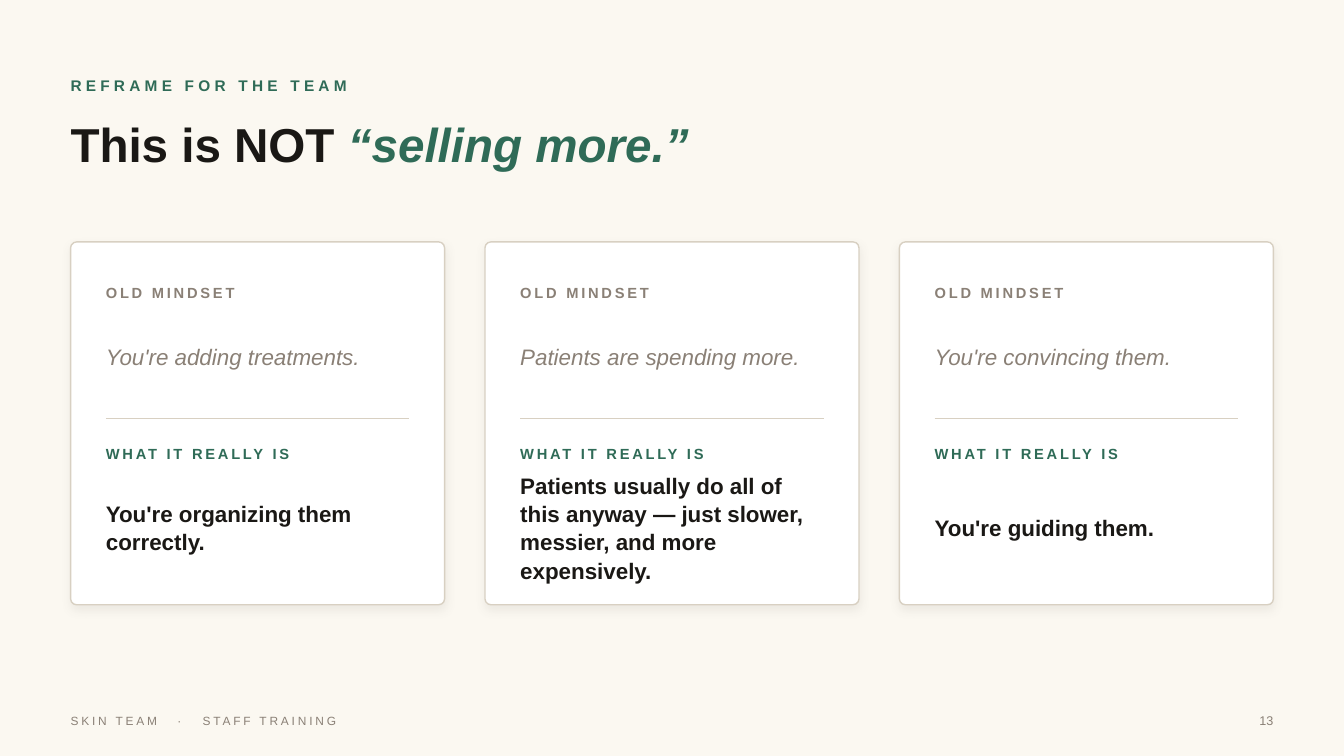
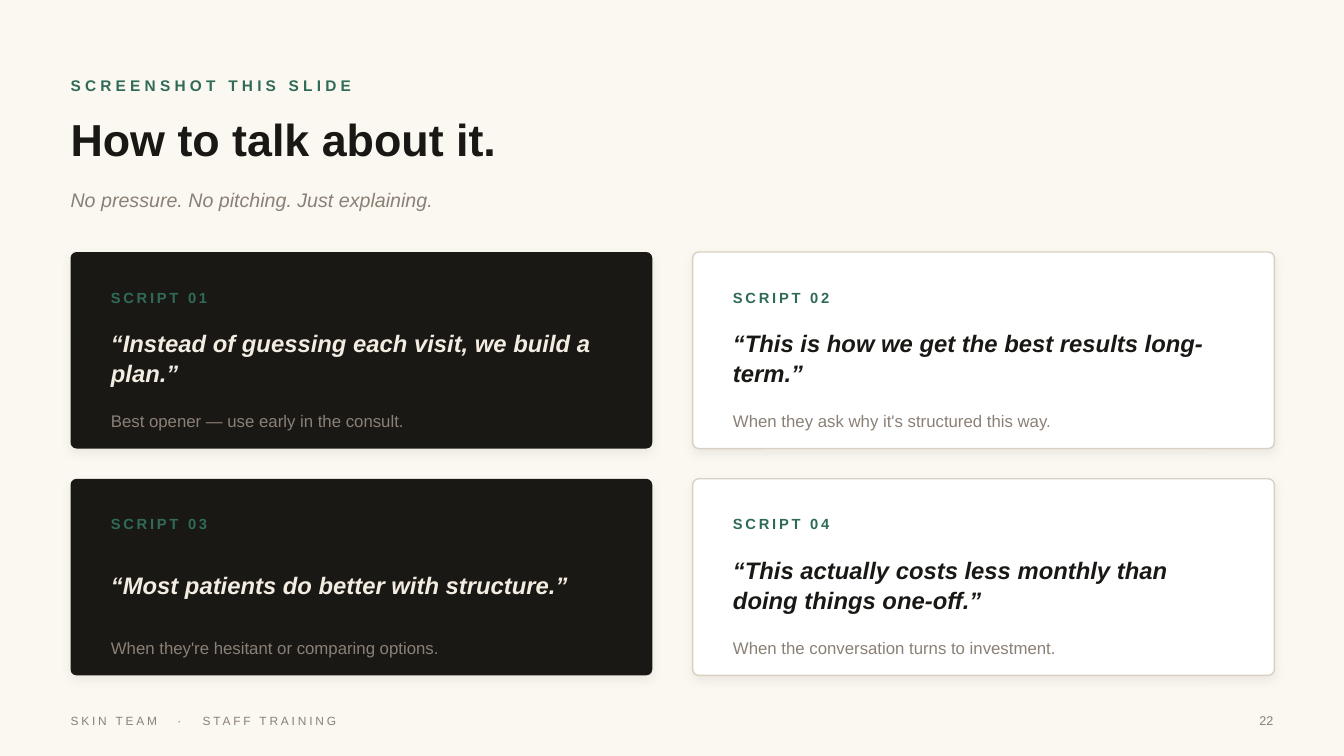
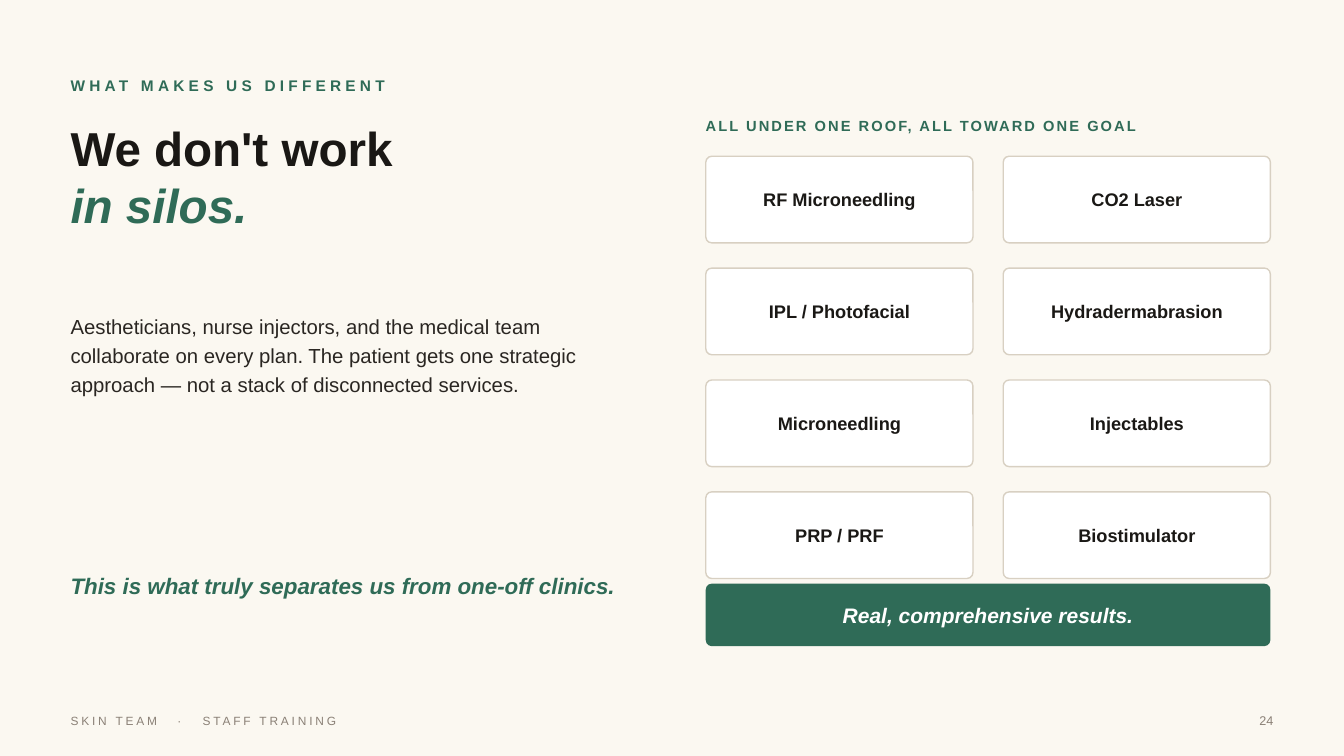
from dataclasses import dataclass, replace

from lxml.etree import SubElement
from pptx import Presentation
from pptx.dml.color import RGBColor
from pptx.enum.shapes import MSO_CONNECTOR as Connector, MSO_SHAPE as Shape
from pptx.enum.text import MSO_ANCHOR as Anchor, PP_ALIGN as Align
from pptx.oxml.ns import qn
from pptx.util import Inches, Pt

FONT = "Arial"
CREAM, WHITE, INK = "FBF8F1", "FFFFFF", "1A1815"
GREEN, GRAY, BORDER = "2F6B57", "8A8076", "D8D0C2"
BODY_INK, PALE, SHADOW = "2A2622", "F3ECE1", "6B655D"
MARGIN = 0.7
CORNER_RADIUS = 0.06


@dataclass(frozen=True)
class Style:
    """Character formatting of a run."""
    size: float
    color: str = INK
    bold: bool = False
    italic: bool = False
    tracking: float = 0


EYEBROW = Style(11, GREEN, bold=True, tracking=3)
LABEL = Style(10.5, GREEN, bold=True, tracking=2)
TITLE = Style(34, bold=True)
TITLE_ACCENT = replace(TITLE, color=GREEN, italic=True)
STATEMENT = Style(16, bold=True)
QUOTE = Style(17, bold=True, italic=True)
CHIP = Style(13, bold=True)

MINDSETS = [
    ("You're adding treatments.", "You're organizing them correctly."),
    ("Patients are spending more.",
     "Patients usually do all of this anyway — just slower, messier, and more expensively."),
    ("You're convincing them.", "You're guiding them."),
]
SCRIPTS = [
    ("“Instead of guessing each visit, we build a plan.”",
     "Best opener — use early in the consult."),
    ("“This is how we get the best results long-term.”",
     "When they ask why it's structured this way."),
    ("“Most patients do better with structure.”",
     "When they're hesitant or comparing options."),
    ("“This actually costs less monthly than doing things one-off.”",
     "When the conversation turns to investment."),
]
TREATMENTS = [
    "RF Microneedling", "CO2 Laser", "IPL / Photofacial", "Hydradermabrasion",
    "Microneedling", "Injectables", "PRP / PRF", "Biostimulator",
]


def rgb(color):
    """Turn a hex string into a colour."""
    return RGBColor.from_string(color)


def add_run(paragraph, text, style):
    """Append one formatted run."""
    run = paragraph.add_run()
    run.text = text
    run.font.name = FONT
    run.font.size = Pt(style.size)
    run.font.bold = style.bold
    run.font.italic = style.italic
    run.font.color.rgb = rgb(style.color)
    if style.tracking:
        run._r.get_or_add_rPr().set("spc", str(int(style.tracking * 100)))


def fill_frame(frame, paragraphs, align=Align.LEFT, spacing=None):
    """Write paragraphs of (text, style) runs into a frame without insets."""
    frame.word_wrap = True
    frame.vertical_anchor = Anchor.MIDDLE
    frame.margin_left = frame.margin_right = frame.margin_top = frame.margin_bottom = 0
    for index, runs in enumerate(paragraphs):
        paragraph = frame.add_paragraph() if index else frame.paragraphs[0]
        paragraph.alignment = align
        if spacing:
            paragraph.line_spacing = spacing
        for text, style in runs:
            add_run(paragraph, text, style)


def add_text(slide, box, *paragraphs, **layout):
    """Add a text box at (left, top, width, height)."""
    shape = slide.shapes.add_textbox(*map(Inches, box))
    fill_frame(shape.text_frame, paragraphs, **layout)
    return shape


def add_shadow(shape):
    """Give a shape a soft shadow falling straight down."""
    effects = shape._element.spPr.find(qn("a:effectLst"))
    shadow = SubElement(effects, qn("a:outerShdw"), blurRad=str(Pt(7)), dist=str(Pt(3)),
                        dir="5400000", algn="bl", rotWithShape="0")
    color = SubElement(shadow, qn("a:srgbClr"), val=SHADOW)
    SubElement(color, qn("a:alpha"), val="10000")


def add_panel(slide, box, fill=WHITE, shadow=False):
    """Add a rounded panel, outlined when it is white."""
    panel = slide.shapes.add_shape(Shape.ROUNDED_RECTANGLE, *map(Inches, box))
    panel.adjustments[0] = CORNER_RADIUS / min(box[2:])
    panel.fill.solid()
    panel.fill.fore_color.rgb = rgb(fill)
    panel.shadow.inherit = False
    if fill == WHITE:
        panel.line.color.rgb = rgb(BORDER)
        panel.line.width = Pt(1)
    else:
        panel.line.fill.background()
    if shadow:
        add_shadow(panel)
    return panel


def add_rule(slide, left, top, width):
    """Add a thin horizontal divider."""
    rule = slide.shapes.add_connector(Connector.STRAIGHT, Inches(left), Inches(top),
                                      Inches(left + width), Inches(top))
    rule.line.color.rgb = rgb(BORDER)
    rule.line.width = Pt(1)
    SubElement(rule._element.spPr, qn("a:effectLst"))


def add_footer(slide, number):
    """Add the deck name, spaced by tab stops, and the page number."""
    deck_name = add_text(slide, (MARGIN, 7, 8, 0.3),
                         [("SKIN TEAM\t·\tSTAFF TRAINING", Style(8.5, GRAY, tracking=2))])
    properties = deck_name.text_frame.paragraphs[0]._p.get_or_add_pPr()
    stops = SubElement(properties, qn("a:tabLst"))
    for position in (1.06, 1.31):
        SubElement(stops, qn("a:tab"), pos=str(Inches(position)), algn="l")
    add_text(slide, (12.13, 7, 0.5, 0.3), [(str(number), Style(9, GRAY))], align=Align.RIGHT)


def new_slide(presentation, eyebrow, number):
    """Add a blank slide with its eyebrow and footer."""
    slide = presentation.slides.add_slide(presentation.slide_layouts[6])
    add_text(slide, (MARGIN, 0.7, 9, 0.3), [(eyebrow, EYEBROW)])
    add_footer(slide, number)
    return slide


def add_mindset_card(slide, left, old, real):
    """Add a card setting an old mindset against the real one."""
    add_panel(slide, (left, 2.4, 3.71, 3.6), shadow=True)
    inner, width = left + 0.35, 3.01
    add_text(slide, (inner, 2.75, width, 0.3), [("OLD MINDSET", replace(LABEL, color=GRAY))])
    add_text(slide, (inner, 3.08, width, 0.9), [(old, Style(16, GRAY, italic=True))], spacing=1.05)
    add_rule(slide, inner, 4.15, width)
    add_text(slide, (inner, 4.35, width, 0.3), [("WHAT IT REALLY IS", LABEL)])
    add_text(slide, (inner, 4.68, width, 1.1), [(real, STATEMENT)], spacing=1.05)


def add_script_card(slide, left, top, label, quote, usage, dark):
    """Add a card with a quote and when to use it."""
    add_panel(slide, (left, top, 5.77, 1.95), INK if dark else WHITE, shadow=True)
    inner, width = left + 0.4, 4.97
    quote_style = replace(QUOTE, color=PALE if dark else INK)
    add_text(slide, (inner, top + 0.3, width, 0.3), [(label, LABEL)])
    add_text(slide, (inner, top + 0.62, width, 0.85), [(quote, quote_style)], spacing=1.05)
    add_text(slide, (inner, top + 1.5, width, 0.35), [(usage, Style(12, GRAY))])


def build_reframe(presentation):
    """Build the slide of three mindset cards."""
    slide = new_slide(presentation, "REFRAME FOR THE TEAM", 13)
    add_text(slide, (MARGIN, 1.02, 11, 0.8),
             [("This is NOT ", TITLE), ("“selling more.”", TITLE_ACCENT)])
    for column, (old, real) in enumerate(MINDSETS):
        add_mindset_card(slide, MARGIN + column * 4.11, old, real)


def build_scripts(presentation):
    """Build the slide of four script cards."""
    slide = new_slide(presentation, "SCREENSHOT THIS SLIDE", 22)
    add_text(slide, (MARGIN, 1.02, 8, 0.7), [("How to talk about it.", replace(TITLE, size=32))])
    add_text(slide, (MARGIN, 1.78, 10, 0.4),
             [("No pressure. No pitching. Just explaining.", Style(14, GRAY, italic=True))])
    for index, (quote, usage) in enumerate(SCRIPTS):
        row, column = divmod(index, 2)
        add_script_card(slide, MARGIN + column * 6.17, 2.5 + row * 2.25,
                        f"SCRIPT {index + 1:02}", quote, usage, dark=column == 0)


def build_difference(presentation):
    """Build the slide of treatments under one roof."""
    slide = new_slide(presentation, "WHAT MAKES US DIFFERENT", 24)
    add_text(slide, (MARGIN, 1.05, 6, 1.4),
             [("We don't work", TITLE)], [("in silos.", TITLE_ACCENT)])
    add_text(slide, (MARGIN, 2.6, 5.6, 1.8),
             [("Aestheticians, nurse injectors, and the medical team collaborate on every plan. "
               "The patient gets one strategic approach — not a stack of disconnected services.",
               Style(14.5, BODY_INK))], spacing=1.2)
    add_text(slide, (MARGIN, 5.4, 5.6, 0.8),
             [("This is what truly separates us from one-off clinics.",
               replace(STATEMENT, color=GREEN, italic=True))], spacing=1.05)
    add_text(slide, (7, 1.1, 5.6, 0.3),
             [("ALL UNDER ONE ROOF, ALL TOWARD ONE GOAL", replace(LABEL, tracking=1.5))])
    for index, treatment in enumerate(TREATMENTS):
        row, column = divmod(index, 2)
        chip = add_panel(slide, (7 + column * 2.95, 1.55 + row * 1.11, 2.65, 0.86))
        fill_frame(chip.text_frame, [[(treatment, CHIP)]], align=Align.CENTER)
    banner = add_panel(slide, (7, 5.79, 5.6, 0.62), GREEN)
    fill_frame(banner.text_frame,
               [[("Real, comprehensive results.", Style(15, WHITE, bold=True, italic=True))]],
               align=Align.CENTER)


def main():
    """Build and save the presentation."""
    presentation = Presentation()
    presentation.slide_width = Inches(13.33)
    presentation.slide_height = Inches(7.5)
    background = presentation.slide_master.background.fill
    background.solid()
    background.fore_color.rgb = rgb(CREAM)
    build_reframe(presentation)
    build_scripts(presentation)
    build_difference(presentation)
    presentation.save("out.pptx")


if __name__ == "__main__":
    main()
